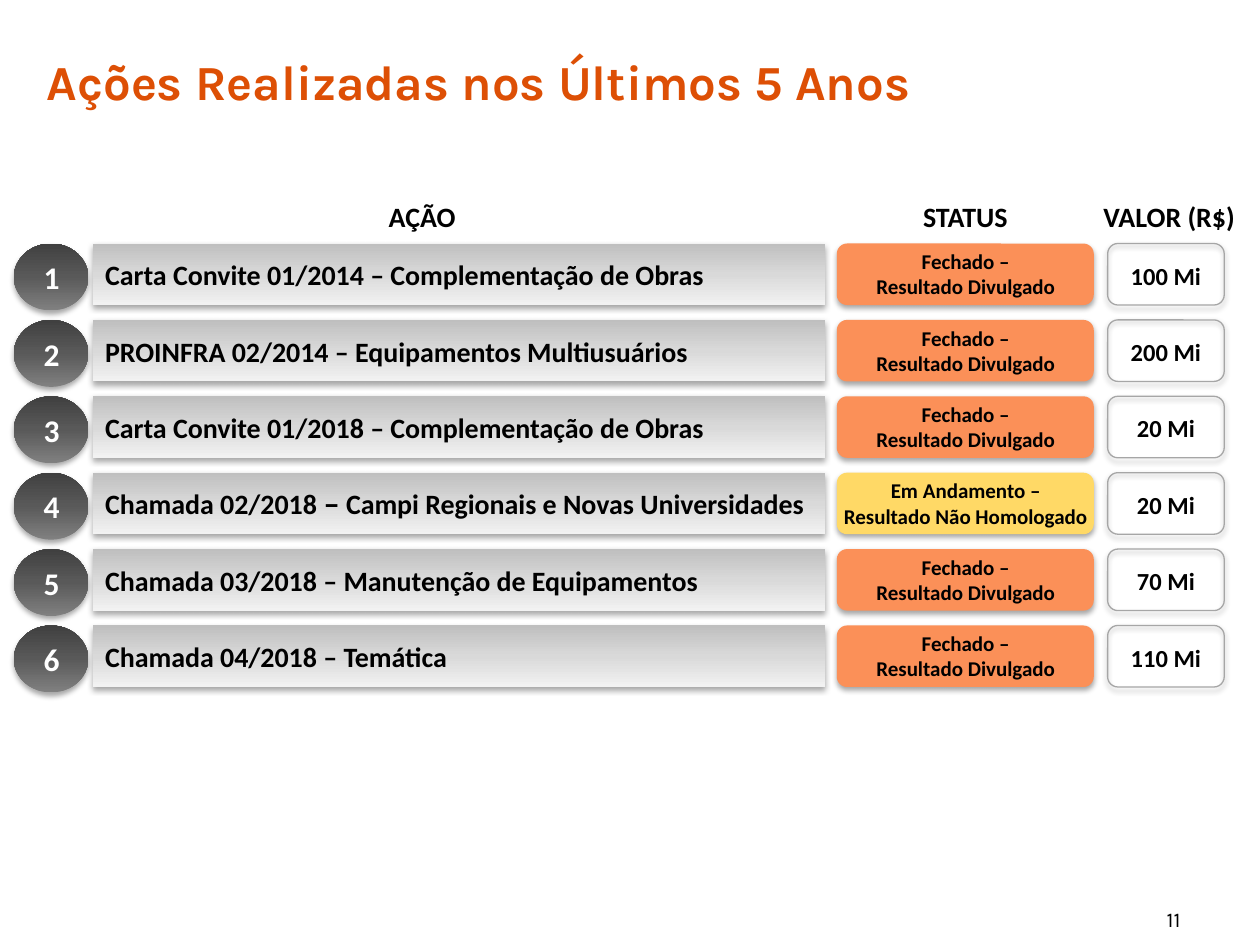
from lxml.etree import SubElement
from pptx import Presentation
from pptx.dml.color import RGBColor
from pptx.enum.shapes import MSO_SHAPE
from pptx.enum.text import MSO_ANCHOR, MSO_AUTO_SIZE, PP_ALIGN
from pptx.oxml.ns import qn
from pptx.util import Cm, Pt

HUES = {
    "title": "DD4F05", "ink": "000000", "white": "FFFFFF", "edge": "A6A6A6",
    "done": "FB9058", "open": "FFD966",
}
BAR = ((0, "F2F2F2"), (50, "D9D9D9"), (100, "BFBFBF"))
DISC = ((0, "808080"), (51, "595959"), (100, "404040"))

DONE = ("Fechado –", "Resultado Divulgado")
OPEN = ("Em Andamento –", "Resultado Não Homologado")
SPLIT = (("Chamada 02/2018", "Calibri"), (" – ", "Karla"),
         ("Campi Regionais e Novas Universidades", "Calibri"))
ROWS = (
    ("Carta Convite 01/2014 – Complementação de Obras", "done", DONE, "100 Mi"),
    ("PROINFRA 02/2014 – Equipamentos Multiusuários", "done", DONE, "200 Mi"),
    ("Carta Convite 01/2018 – Complementação de Obras", "done", DONE, "20 Mi"),
    (SPLIT, "open", OPEN, "20 Mi"),
    ("Chamada 03/2018 – Manutenção de Equipamentos", "done", DONE, "70 Mi"),
    ("Chamada 04/2018 – Temática", "done", DONE, "110 Mi"),
)
HEADS = (("AÇÃO", 7.57, 1.88), ("STATUS", 18.34, 2.24), ("VALOR (R$)", 21.97, 3.2))
TOP, STEP, HIGH = 4.91, 1.54, 1.24


def paint(hue):
    return RGBColor.from_string(HUES[hue])


def place(item, x, y, w, h):
    item.left, item.top, item.width, item.height = Cm(x), Cm(y), Cm(w), Cm(h)


def write(frame, *lines, size=16, font="Calibri", hue="ink", bold=True,
          align=PP_ALIGN.CENTER, wrap=False, fit=MSO_AUTO_SIZE.SHAPE_TO_FIT_TEXT,
          anchor=MSO_ANCHOR.TOP):
    frame.auto_size = fit
    frame.word_wrap = wrap
    frame.vertical_anchor = anchor
    for i, line in enumerate(lines):
        para = frame.add_paragraph() if i else frame.paragraphs[0]
        para.alignment = align
        parts = ((line, font),) if isinstance(line, str) else line
        for words, face in parts:
            run = para.add_run()
            run.text = words
            run.font.size = Pt(size)
            run.font.name = face
            run.font.bold = bold
            run.font.color.rgb = paint(hue)


def label(slide, x, y, w, h, *lines, **style):
    box = slide.shapes.add_textbox(Cm(x), Cm(y), Cm(w), Cm(h))
    write(box.text_frame, *lines, **style)


def block(slide, kind, x, y, w, h):
    shape = slide.shapes.add_shape(kind, Cm(x), Cm(y), Cm(w), Cm(h))
    shape.fill.background()
    shape.line.fill.background()
    shape.shadow.inherit = False
    glow = shape.element.spPr.find(qn("a:effectLst"))
    cast = SubElement(glow, qn("a:outerShdw"), blurRad="40000", dist="23000",
                      dir="5400000", rotWithShape="0")
    tint = SubElement(cast, qn("a:srgbClr"), val=HUES["ink"])
    SubElement(tint, qn("a:alpha"), val="35000")
    return shape


def blend(shape, stops):
    shape.fill.gradient()
    shape.fill.gradient_angle = 90
    group = shape.element.spPr.find(qn("a:gradFill")).find(qn("a:gsLst"))
    for old in list(group):
        group.remove(old)
    for pos, tone in stops:
        stop = SubElement(group, qn("a:gs"), pos=str(pos * 1000))
        SubElement(stop, qn("a:srgbClr"), val=tone)


def row(slide, num, y, deed, state, notes, cost):
    blend(block(slide, MSO_SHAPE.RECTANGLE, 1.87, y, 14.76, HIGH), BAR)
    blend(block(slide, MSO_SHAPE.OVAL, 0.28, y, 1.5, 1.35), DISC)
    pill = block(slide, MSO_SHAPE.ROUNDED_RECTANGLE, 16.87, y, 5.18, HIGH)
    pill.fill.solid()
    pill.fill.fore_color.rgb = paint(state)
    frame = block(slide, MSO_SHAPE.ROUNDED_RECTANGLE, 22.33, y, 2.35, HIGH)
    frame.line.color.rgb = paint("edge")
    frame.line.width = Pt(0.75)

    label(slide, 0.62, y + 0.17, 0.84, 1.02, str(num), size=18, hue="white")
    label(slide, 1.87, y + 0.16, 14.78, 0.94, deed, align=PP_ALIGN.LEFT, wrap=True)
    label(slide, 16.47, y - 0.02, 6, 1.28, *notes, size=12, wrap=True)
    label(slide, 22.33, y + 0.22, 2.35, 0.86, cost, size=14, wrap=True)


def main():
    deck = Presentation()
    deck.slide_width, deck.slide_height = Cm(25.4), Cm(19.05)
    slide = deck.slides.add_slide(deck.slide_layouts[5])

    title = slide.shapes.title
    place(title, 0.69, 0.03, 24.71, 3.2)
    write(title.text_frame, "Ações Realizadas nos Últimos 5 Anos", size=28,
          font="Karla", hue="title", align=PP_ALIGN.LEFT, wrap=True,
          fit=MSO_AUTO_SIZE.NONE, anchor=MSO_ANCHOR.MIDDLE)

    for head, x, w in HEADS:
        label(slide, x, 3.89, w, 0.94, head)
    for i, data in enumerate(ROWS):
        row(slide, i + 1, TOP + i * STEP, *data)
    label(slide, 23.04, 18.19, 1.24, 0.66, "11", size=12, font="Karla",
          bold=False, fit=MSO_AUTO_SIZE.NONE, anchor=MSO_ANCHOR.MIDDLE)

    deck.save("out.pptx")


if __name__ == "__main__":
    main()
